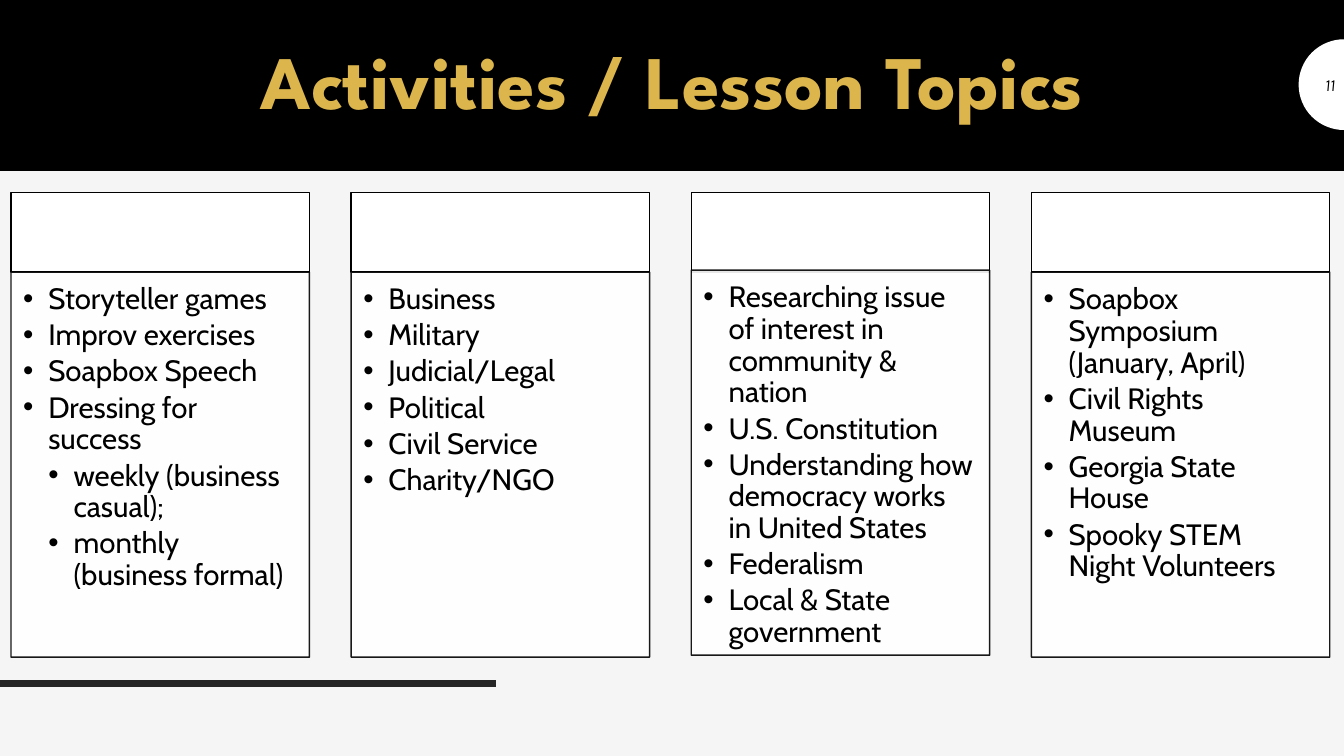
import math
from lxml import etree
from pptx import Presentation
from pptx import util as u
from pptx.dml.color import RGBColor
from pptx.enum import shapes, text
from pptx.oxml.ns import qn

TITLE = "Activities / Lesson Topics"
PAGE_NUMBER = "11"
# Each column: top of its list box, then (indent level, text) items
COLUMNS = [
    (2.7, [(1, "Storyteller games"), (1, "Improv exercises"), (1, "Soapbox Speech"),
           (1, "Dressing for success"), (2, "weekly (business casual);"),
           (2, "monthly (business formal)")]),
    (2.7, [(1, "Business"), (1, "Military"), (1, "Judicial/Legal"), (1, "Political"),
           (1, "Civil Service"), (1, "Charity/NGO")]),
    (2.68, [(1, "Researching issue of interest in community & nation"),
            (1, "U.S. Constitution"),
            (1, "Understanding how democracy works in United States"),
            (1, "Federalism"), (1, "Local & State government")]),
    (2.7, [(1, "Soapbox Symposium (January, April)"), (1, "Civil Rights Museum"),
           (1, "Georgia State House"), (1, "Spooky STEM Night Volunteers")]),
]

BLACK = RGBColor(0x00, 0x00, 0x00)
WHITE = RGBColor(0xFF, 0xFF, 0xFF)
GOLD = RGBColor(0xDC, 0xB6, 0x4D)
CHARCOAL = RGBColor(0x26, 0x26, 0x26)
PALE_GRAY = RGBColor(0xF5, 0xF5, 0xF5)

SLIDE_WIDTH, SLIDE_HEIGHT = 13.33, 7.5
COLUMN_LEFT, COLUMN_WIDTH, COLUMN_RIGHT = 0.11, 2.96, 13.19
COLUMN_STEP = (COLUMN_RIGHT - COLUMN_WIDTH - COLUMN_LEFT) / (len(COLUMNS) - 1)
HEADER_TOP, HEADER_HEIGHT, LIST_HEIGHT = 1.91, 0.79, 3.82
INDENT = 0.25


def inches(*lengths):
    return [u.Inches(length) for length in lengths]


def set_alpha(fill, percent):
    color = fill._xPr.find(qn("a:solidFill"))[0]
    etree.SubElement(color, qn("a:alpha")).set("val", str(percent * 1000))


def add_box(slide, left, top, width, height, fill, alpha=100):
    shape = slide.shapes.add_shape(shapes.MSO_SHAPE.RECTANGLE,
                                   *inches(left, top, width, height))
    shape.shadow.inherit = False
    shape.fill.solid()
    shape.fill.fore_color.rgb = fill
    shape.line.color.rgb = BLACK
    shape.line.width = u.Pt(1)
    if alpha < 100:
        set_alpha(shape.fill, alpha)
        set_alpha(shape.line.fill, alpha)
    return shape


def write(paragraph, words, font, size, color=BLACK, bold=False, italic=False,
          align=text.PP_ALIGN.LEFT, line_spacing=None, space_after=0, bullet_level=0):
    if bullet_level:
        properties = paragraph._p.get_or_add_pPr()
        properties.set("marL", str(u.Inches(INDENT * bullet_level)))
        properties.set("indent", str(-u.Inches(INDENT)))
        etree.SubElement(properties, qn("a:buFont")).set("typeface", "Arial")
        etree.SubElement(properties, qn("a:buChar")).set("char", "•")
        paragraph.level = bullet_level
    paragraph.alignment = align
    paragraph.line_spacing = line_spacing
    paragraph.space_before = u.Pt(0)
    paragraph.space_after = u.Pt(space_after)
    run = paragraph.add_run()
    run.text = words
    run.font.name = font
    run.font.size = u.Pt(size)
    run.font.color.rgb = color
    run.font.bold = bold
    run.font.italic = italic


def add_half_disc(slide, right, middle, radius, fill):
    """Draw the left half of a disc, flat side at right."""
    points = []
    for step in range(33):
        angle = math.pi * step / 32
        points.append(inches(right - radius * math.sin(angle),
                             middle - radius * math.cos(angle)))
    builder = slide.shapes.build_freeform(*points[0])
    builder.add_line_segments(points[1:], close=True)
    disc = builder.convert_to_shape()
    disc.shadow.inherit = False
    disc.fill.solid()
    disc.fill.fore_color.rgb = fill
    disc.line.fill.background()


def add_rule(slide, length, top):
    rule = slide.shapes.add_connector(shapes.MSO_CONNECTOR.STRAIGHT,
                                      *inches(0, top, length, top))
    rule.line.color.rgb = CHARCOAL
    rule.line.width = u.Pt(4.5)
    etree.SubElement(rule._element.spPr, qn("a:effectLst"))


def add_title(slide):
    title = slide.shapes.title
    title.left, title.top, title.width, title.height = inches(0.83, 0.29, 11.67, 1.1)
    slide.shapes._spTree.append(title._element)  # bring in front of the banner
    frame = title.text_frame
    frame.auto_size = text.MSO_AUTO_SIZE.NONE
    frame.word_wrap = True
    frame.vertical_anchor = text.MSO_ANCHOR.MIDDLE
    write(frame.paragraphs[0], TITLE, "League Spartan", 54, color=GOLD, bold=True,
          align=text.PP_ALIGN.CENTER, line_spacing=0.9)


def add_page_number(slide):
    box = slide.shapes.add_textbox(*inches(12.89, 0.64, 0.45, 0.4))
    box.text_frame.word_wrap = True
    box.text_frame.vertical_anchor = text.MSO_ANCHOR.MIDDLE
    write(box.text_frame.paragraphs[0], PAGE_NUMBER, "Karla", 12, italic=True,
          align=text.PP_ALIGN.RIGHT)


def add_column(slide, left, list_top, items):
    add_box(slide, left, HEADER_TOP, COLUMN_WIDTH, HEADER_HEIGHT, WHITE)
    body = add_box(slide, left, list_top, COLUMN_WIDTH, LIST_HEIGHT, WHITE, alpha=90)
    frame = body.text_frame
    frame.word_wrap = True
    frame.vertical_anchor = text.MSO_ANCHOR.TOP
    (frame.margin_left, frame.margin_top,
     frame.margin_right, frame.margin_bottom) = inches(0.12, 0.12, 0.16, 0.18)
    for number, (level, words) in enumerate(items):
        paragraph = frame.add_paragraph() if number else frame.paragraphs[0]
        write(paragraph, words, "Cabin", 21, line_spacing=0.9, space_after=3.15,
              bullet_level=level)


def main():
    presentation = Presentation()
    presentation.slide_width, presentation.slide_height = inches(SLIDE_WIDTH, SLIDE_HEIGHT)
    slide = presentation.slides.add_slide(presentation.slide_layouts[5])
    slide.background.fill.solid()
    slide.background.fill.fore_color.rgb = PALE_GRAY

    add_rule(slide, 4.92, 6.78)
    add_box(slide, 0, 0, SLIDE_WIDTH, 1.69, BLACK)
    add_half_disc(slide, SLIDE_WIDTH, 0.84, 0.45, WHITE)
    add_title(slide)
    add_page_number(slide)
    for index, (list_top, items) in enumerate(COLUMNS):
        add_column(slide, COLUMN_LEFT + index * COLUMN_STEP, list_top, items)
    presentation.save("out.pptx")


if __name__ == "__main__":
    main()
